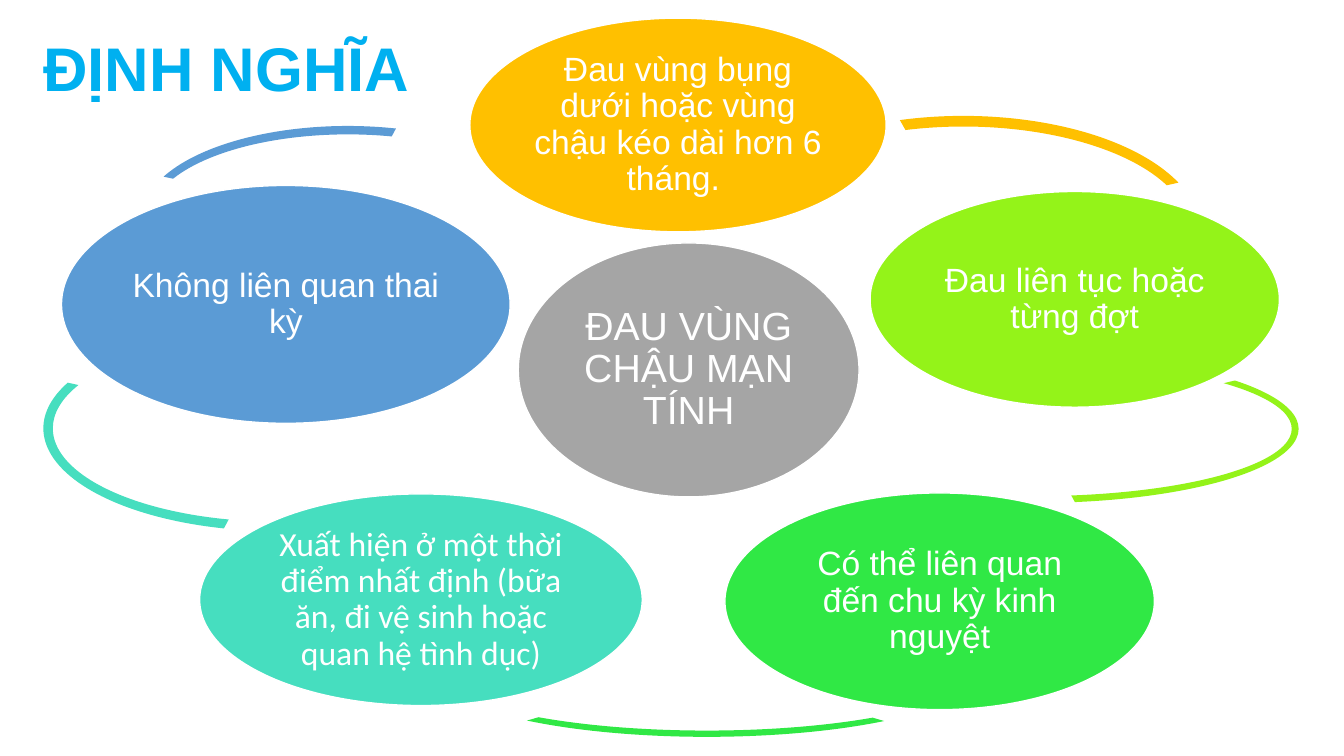
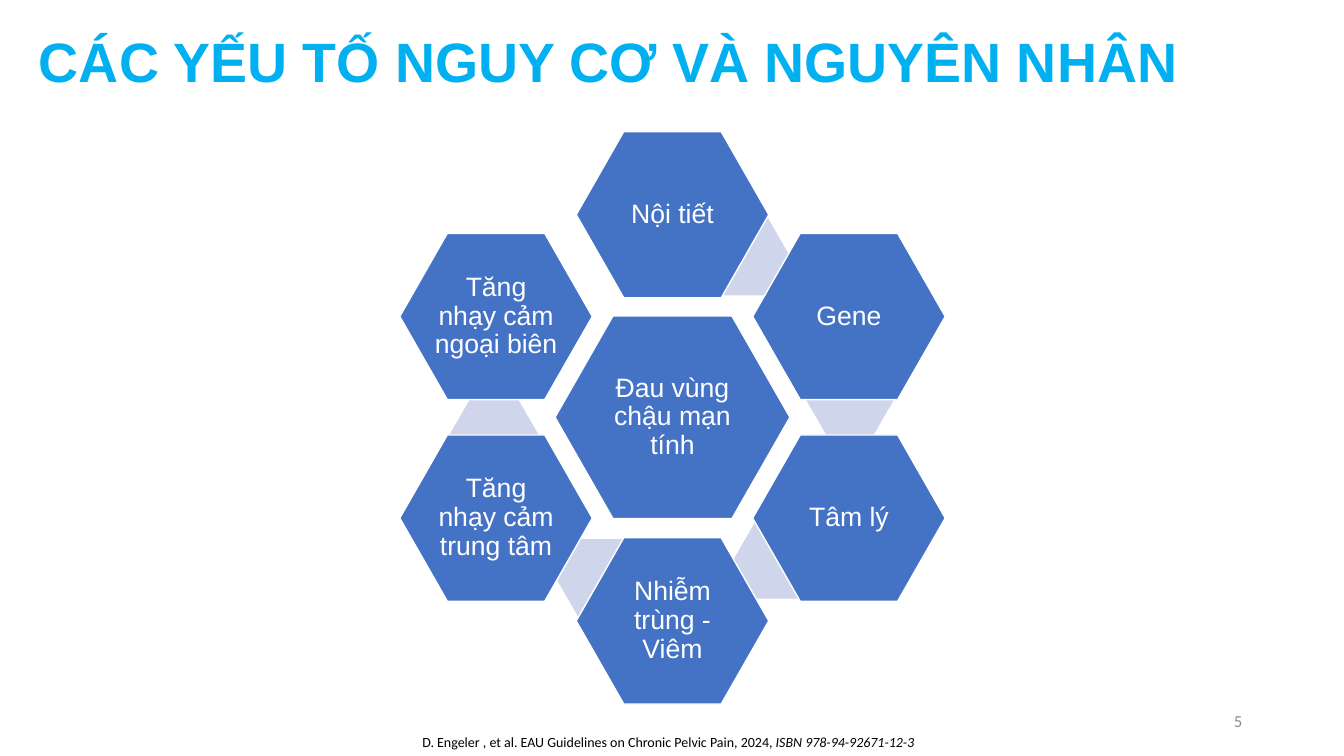
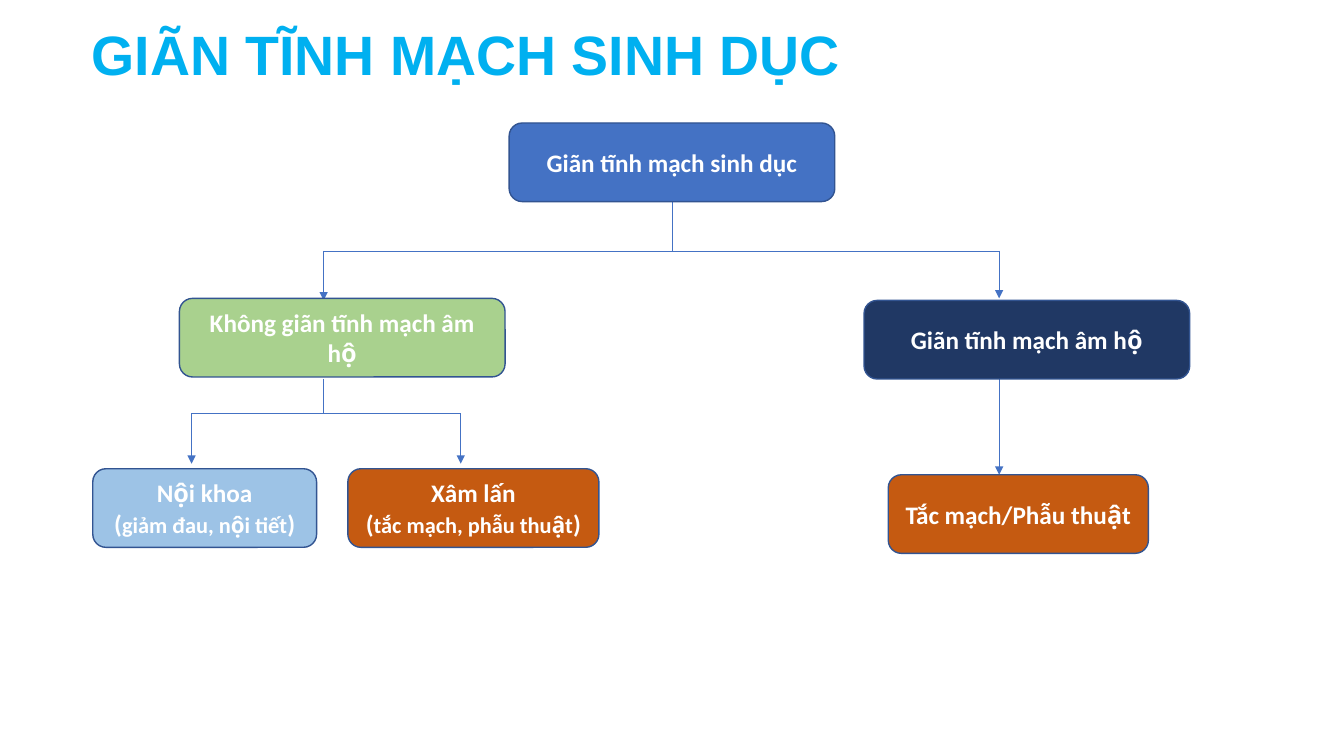
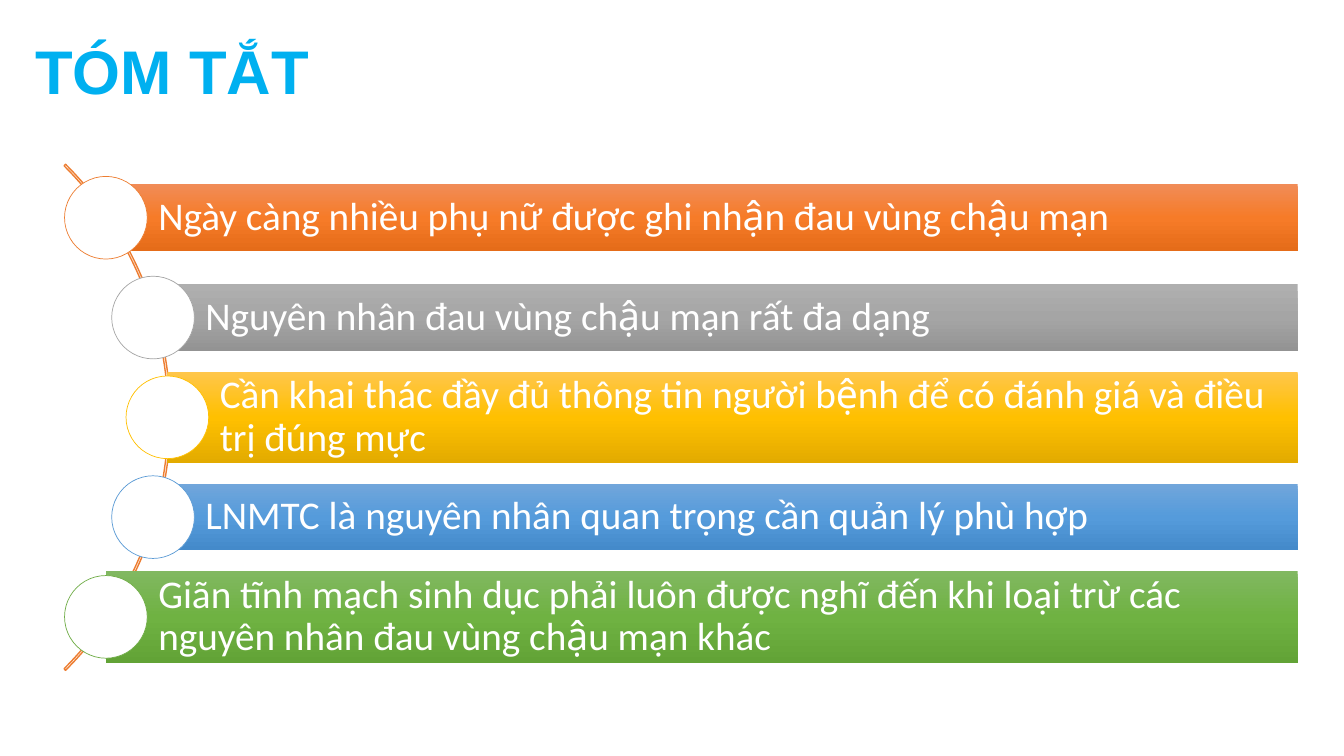
import math
import pptx
import pptx.util
import pptx.dml.color
import pptx.enum.shapes
import pptx.enum.text
import pptx.oxml
import pptx.oxml.ns
from lxml import etree

Inches = pptx.util.Inches
SHAPE = pptx.enum.shapes.MSO_SHAPE
ALIGN = pptx.enum.text.PP_ALIGN
ANCHOR = pptx.enum.text.MSO_ANCHOR
qn = pptx.oxml.ns.qn

COLORS = {
    "title": "00B0F0", "white": "FFFFFF", "black": "000000", "number": "8C8C8C",
    "gray": "A5A5A5", "gold": "FFC000", "lime": "94F319", "green": "30E845",
    "teal": "46DEBF", "sky": "5B9BD5", "blue": "4472C4", "pale": "CFD5EA",
    "border": "325491", "sage": "A9D18E", "navy": "203864", "light": "9DC3E6",
    "rust": "C55A11", "orange": "ED7D31", "leaf": "70AD47",
}
GRADIENTS = {
    "orange": ("F18C57", "F67B28", "E56C19"),
    "gray": ("AFAFAF", "A5A5A5", "939393"),
    "gold": ("FFC64B", "FFC000", "E3AB00"),
    "sky": ("71A6DB", "559BDB", "448ACA"),
    "leaf": ("81B861", "6FB242", "62A336"),
}
VOWELS = "aăâeêioôơuưy"
TONED_VOWELS = {
    0x300: "àằầèềìòồờùừỳ",
    0x301: "áắấéếíóốớúứý",
    0x303: "ãẵẫẽễĩõỗỡũữỹ",
    0x309: "ảẳẩẻểỉỏổởủửỷ",
    0x323: "ạặậẹệịọộợụựỵ",
}
TONE_MARKS = {ord(toned): vowel + chr(mark)
              for mark, row in TONED_VOWELS.items()
              for vowel, toned in zip(VOWELS, row)}


def split_tones(text):
    return text.translate(TONE_MARKS)


def rgb(name):
    return pptx.dml.color.RGBColor.from_string(COLORS[name])


def style_run(run, size, font, color="white", bold=False, italic=False):
    run.font.size = pptx.util.Pt(size)
    run.font.name = font
    run.font.bold = bold
    run.font.italic = italic
    run.font.color.rgb = rgb(color)


def write(shape, text, size, font="Arial", align=ALIGN.CENTER, spacing=0.9,
          margins=None, color="white", bold=False):
    frame = shape.text_frame
    frame.text = text
    frame.word_wrap = True
    frame.vertical_anchor = ANCHOR.MIDDLE
    if margins:
        (frame.margin_left, frame.margin_top,
         frame.margin_right, frame.margin_bottom) = [Inches(m) for m in margins]
    for paragraph in frame.paragraphs:
        paragraph.alignment = align
        paragraph.line_spacing = spacing
        for run in paragraph.runs:
            style_run(run, size, font, color, bold)


def add_form(slide, kind, box, fill=None, line=None, width=1, adjust=()):
    form = slide.shapes.add_shape(kind, *[Inches(v) for v in box])
    form.shadow.inherit = False
    if fill:
        form.fill.solid()
        form.fill.fore_color.rgb = rgb(fill)
    else:
        form.fill.background()
    if line:
        form.line.color.rgb = rgb(line)
        form.line.width = pptx.util.Pt(width)
    else:
        form.line.fill.background()
    for index, value in enumerate(adjust):
        form.adjustments[index] = value
    return form


def add_titled_slide(deck, text, box, size, align=ALIGN.LEFT):
    slide = deck.slides.add_slide(deck.slide_layouts[5])
    title = slide.shapes.title
    title.left, title.top, title.width, title.height = [Inches(v) for v in box]
    write(title, text, size, align=align, color="title", bold=True)
    title.text_frame.auto_size = pptx.enum.text.MSO_AUTO_SIZE.NONE
    return slide


def add_symptom_ring(slide, left, top):
    arcs = [
        ("sky", (0.98, 1.07, 4.08, 1.81), (115.449, 179.097)),
        ("teal", (0, 3.05, 4.65, 2.04), (70.977, 115.363)),
        ("green", (3.84, 5.79, 5.48, 1.34), (9.76, 98.447)),
        ("lime", (7.23, 3.34, 5.22, 1.47), (207.822, 37.029)),
        ("gold", (6.77, 0.97, 4.71, 2.3), (144.23, 208.273)),
    ]
    ovals = [
        ("gray", (4.71, 2.23, 3.38, 2.52), 28, "Arial", "ĐAU VÙNG CHẬU MẠN TÍNH"),
        ("gold", (4.23, 0, 4.13, 2.12), 24, "Arial",
         "Đau vùng bụng dưới hoặc vùng chậu kéo dài hơn 6 tháng. "),
        ("lime", (8.2, 1.72, 4.06, 2.14), 24, "Arial", "Đau liên tục hoặc từng đợt"),
        ("green", (6.76, 4.71, 4.26, 2.15), 24, "Arial",
         "Có thể liên quan đến chu kỳ kinh nguyệt"),
        ("teal", (1.55, 4.72, 4.39, 2.1), 24, "Calibri",
         "Xuất hiện ở một thời điểm nhất định (bữa ăn, đi vệ sinh hoặc quan hệ tình dục)"),
        ("sky", (0.18, 1.66, 4.45, 2.36), 24, "Arial", "Không liên quan thai kỳ"),
    ]
    for color, (x, y, w, h), angles in arcs:
        add_form(slide, SHAPE.BLOCK_ARC, (left + x, top + y, w, h), color,
                 adjust=(*angles, 0.046))
    for color, (x, y, w, h), size, font, text in ovals:
        oval = add_form(slide, SHAPE.OVAL, (left + x, top + y, w, h), color, "white")
        write(oval, text, size, font, margins=(0.03,) * 4)


def add_hexagon(slide, center_x, center_y, width, height, text):
    box = (center_x - width / 2, center_y - height / 2, width, height)
    hexagon = add_form(slide, SHAPE.HEXAGON, box, "blue", "white", adjust=(0.286,))
    write(hexagon, text, 19, margins=(0.02, 0.03, 0.02, 0.03))


def add_cause_cluster(slide, center_x, center_y):
    links = [(0.29, -1.97), (1.32, -0.56), (0.6, 1.04), (-1.16, 1.21), (-2.21, -0.21)]
    causes = [
        (0, -2.01, "Nội tiết"),
        (1.75, -1, "Gene"),
        (1.75, 1, "Tâm lý"),
        (0, 2.02, "Nhiễm trùng - Viêm"),
        (-1.75, 1, "Tăng nhạy cảm trung tâm"),
        (-1.75, -1, "Tăng nhạy cảm ngoại biên"),
    ]
    for x, y in links:
        add_form(slide, SHAPE.HEXAGON, (center_x + x, center_y + y, 0.88, 0.76),
                 "pale", adjust=(0.289,))
    add_hexagon(slide, center_x, center_y, 2.33, 2.01, "Đau vùng chậu mạn tính")
    for x, y, text in causes:
        add_hexagon(slide, center_x + x, center_y + y, 1.91, 1.65, text)


def add_citation(slide, left, top):
    citation = slide.shapes.add_textbox(Inches(left), Inches(top), Inches(5.83), Inches(0.27))
    citation.text_frame.word_wrap = True
    paragraph = citation.text_frame.paragraphs[0]
    parts = [("D. Engeler , et al. EAU Guidelines on Chronic Pelvic Pain, 2024, ", False),
             ("ISBN 978-94-92671-12-3", True)]
    for text, italic in parts:
        run = paragraph.add_run()
        run.text = text
        style_run(run, 10, "Calibri", "black", italic=italic)


def add_page_number(slide, left, top, number):
    page = slide.shapes.add_textbox(Inches(left), Inches(top), Inches(3), Inches(0.4))
    write(page, number, 12, "Calibri", ALIGN.RIGHT, 1, color="number")


def add_branch(slide, start, end, arrow):
    points = [Inches(v) for v in (*start, *end)]
    branch = slide.shapes.add_connector(pptx.enum.shapes.MSO_CONNECTOR.STRAIGHT, *points)
    branch.line.color.rgb = rgb("blue")
    branch.line.width = pptx.util.Pt(0.5)
    properties = branch._element.spPr
    if arrow:
        etree.SubElement(properties.find(qn("a:ln")), qn("a:tailEnd"), type="triangle")
    etree.SubElement(properties, qn("a:effectLst"))


def add_treatment_tree(slide, left, top):
    branches = [
        (5.75, 0.78, 5.75, 1.27, False),
        (2.29, 1.27, 8.99, 1.27, False),
        (2.29, 1.27, 2.29, 1.76, True),
        (8.99, 1.27, 8.99, 1.74, True),
        (2.29, 2.54, 2.29, 2.88, False),
        (0.98, 2.88, 3.65, 2.88, False),
        (0.98, 2.88, 0.98, 3.38, True),
        (3.65, 2.88, 3.65, 3.38, True),
        (8.99, 2.54, 8.99, 3.49, True),
    ]
    nodes = [
        (4.13, 0, 3.23, "blue", "Giãn tĩnh mạch sinh dục", None),
        (0.86, 1.74, 3.23, "sage", "Không giãn tĩnh mạch âm hộ", None),
        (7.65, 1.76, 3.23, "navy", "Giãn tĩnh mạch âm hộ", None),
        (0, 3.43, 2.22, "light", "Nội khoa", "giảm đau, nội tiết"),
        (2.53, 3.43, 2.49, "rust", "Xâm lấn", "tắc mạch, phẫu thuật"),
        (7.89, 3.49, 2.58, "rust", "Tắc mạch/Phẫu thuật", None),
    ]
    for x1, y1, x2, y2, arrow in branches:
        add_branch(slide, (left + x1, top + y1), (left + x2, top + y2), arrow)
    for x, y, width, color, text, detail in nodes:
        node = add_form(slide, SHAPE.ROUNDED_RECTANGLE, (left + x, top + y, width, 0.78),
                        color, "border")
        write(node, split_tones(text), 18, "Calibri", spacing=1, bold=True)
        if detail:
            paragraph = node.text_frame.add_paragraph()
            paragraph.alignment = ALIGN.CENTER
            for part, size in (("(", 18), (split_tones(detail), 16), (")", 18)):
                run = paragraph.add_run()
                run.text = part
                style_run(run, size, "Calibri", bold=True)


def fill_gradient(shape, stops):
    shape.fill.gradient()
    shape.fill.gradient_angle = 270
    stop_list = shape._element.spPr.find(".//" + qn("a:gsLst"))
    for stop in list(stop_list):
        stop_list.remove(stop)
    for position, color in zip((0, 50000, 100000), stops):
        stop = etree.SubElement(stop_list, qn("a:gs"), pos=str(position))
        etree.SubElement(stop, qn("a:srgbClr"), val=color)


def add_summary_arc(slide, center_x, center_y, right):
    outer, track, step, dot = 3.55, 3.52, 0.99, 0.82
    points = [
        ("orange", 0.66, "Ngày càng nhiều phụ nữ được ghi nhận đau vùng chậu mạn"),
        ("gray", 0.66, "Nguyên nhân đau vùng chậu mạn rất đa dạng"),
        ("gold", 0.9, "Cần khai thác đầy đủ thông tin người bệnh để có đánh giá và điều trị đúng mực"),
        ("sky", 0.66, "LNMTC là nguyên nhân quan trọng cần quản lý phù hợp"),
        ("leaf", 0.92, "Giãn tĩnh mạch sinh dục phải luôn được nghĩ đến khi loại trừ các "
                       "nguyên nhân đau vùng chậu mạn khác"),
    ]
    add_form(slide, SHAPE.BLOCK_ARC,
             (center_x - outer, center_y - outer, 2 * outer, 2 * outer),
             line="orange", adjust=(189, 27, 0.003))
    for index, (color, height, text) in enumerate(points):
        offset = (index - 2) * step
        x = center_x + math.sqrt(track ** 2 - offset ** 2)
        y = center_y + offset
        bar = add_form(slide, SHAPE.RECTANGLE, (x, y - height / 2, right - x, height))
        fill_gradient(bar, GRADIENTS[color])
        write(bar, split_tones(text), 28, "Calibri", ALIGN.LEFT,
              margins=(0.52, 0.08, 0.08, 0.08))
        add_form(slide, SHAPE.OVAL, (x - dot / 2, y - dot / 2, dot, dot),
                 "white", color, 0.5)


def main():
    deck = pptx.Presentation()
    deck.slide_width = Inches(13.33)
    deck.slide_height = Inches(7.5)

    definition = add_titled_slide(deck, "ĐỊNH NGHĨA", (0.33, 0.09, 4.38, 1.24), 44)
    add_symptom_ring(definition, 0.43, 0.18)

    causes = add_titled_slide(deck, "CÁC YẾU TỐ NGUY CƠ VÀ NGUYÊN NHÂN",
                              (0.11, 0.18, 11.85, 0.93), 39.6, ALIGN.CENTER)
    add_cause_cluster(causes, 6.67, 4.14)
    add_citation(causes, 4.09, 7.23)
    add_page_number(causes, 9.42, 6.95, "5")

    treatment = add_titled_slide(deck, "GIÃN TĨNH MẠCH SINH DỤC",
                                 (0.81, 0.26, 12.42, 0.63), 39.6)
    add_treatment_tree(treatment, 0.92, 1.22)

    summary = add_titled_slide(deck, "TÓM TẮT", (0.25, 0.13, 3.34, 1.22), 44)
    add_summary_arc(summary, -1.86, 4.14, 12.87)

    deck.save("out.pptx")


if __name__ == "__main__":
    main()
